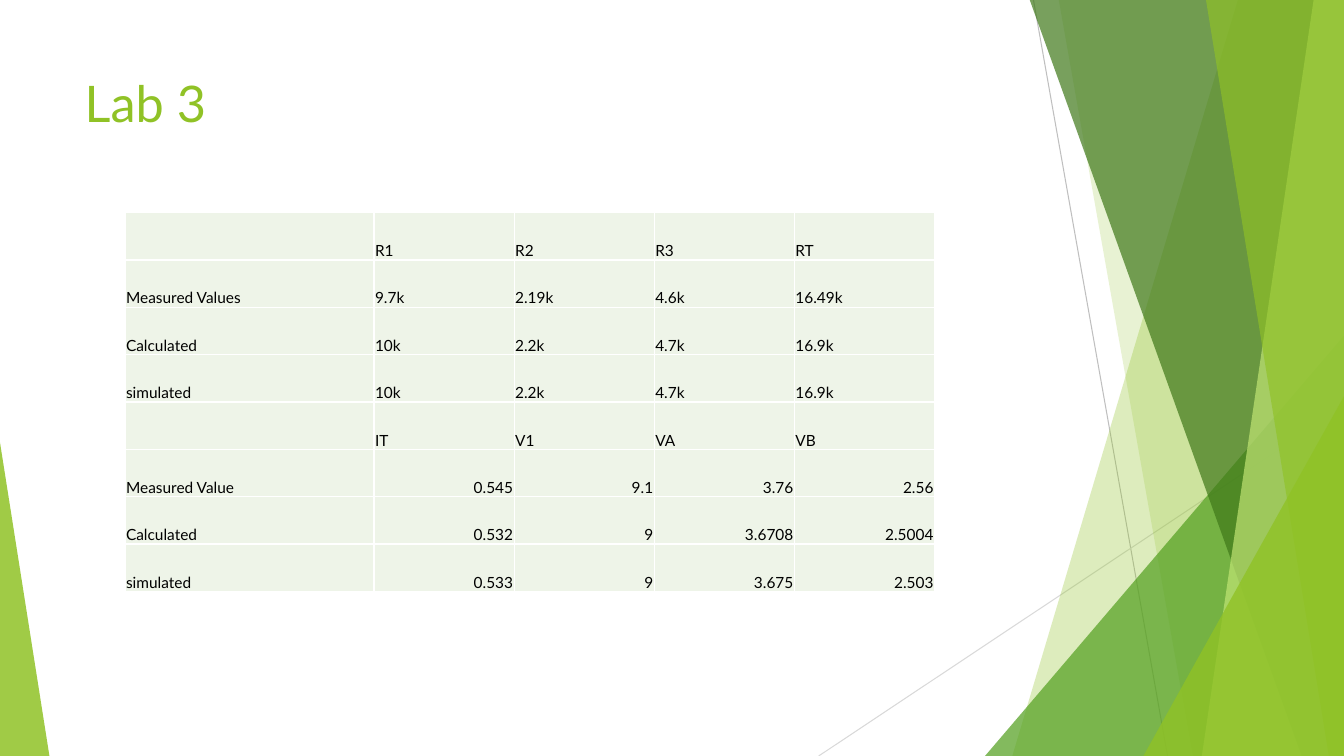
from lxml.etree import SubElement
from pptx import Presentation
from pptx.dml.color import RGBColor
from pptx.enum.shapes import MSO_CONNECTOR, MSO_SHAPE
from pptx.enum.text import MSO_ANCHOR, PP_ALIGN
from pptx.oxml.ns import qn
from pptx.util import Emu, Pt

PX = 9144
WIDE, HIGH = 1333, 750
WHITE = RGBColor(0xFF, 0xFF, 0xFF)
BLACK = RGBColor(0x00, 0x00, 0x00)
SILVER = RGBColor(0xBF, 0xBF, 0xBF)
PALE = RGBColor(0xD9, 0xD9, 0xD9)
LIME = RGBColor(0x90, 0xC2, 0x26)
GREEN = RGBColor(0x54, 0xA0, 0x21)
FOREST = RGBColor(0x3F, 0x78, 0x19)
LIGHT = RGBColor(0xC0, 0xE4, 0x74)
MINT = RGBColor(0xEE, 0xF4, 0xE8)

ROWS = [
    ["", "R1", "R2", "R3", "RT"],
    ["Measured Values", "9.7k", "2.19k", "4.6k", "16.49k"],
    ["Calculated", "10k", "2.2k", "4.7k", "16.9k"],
    ["simulated", "10k", "2.2k", "4.7k", "16.9k"],
    ["", "IT", "V1", "VA", "VB"],
    ["Measured Value", "0.545", "9.1", "3.76", "2.56"],
    ["Calculated", "0.532", "9", "3.6708", "2.5004"],
    ["simulated", "0.533", "9", "3.675", "2.503"],
]


class Board:
    """Draws styled elements on one slide, with lengths in px."""

    def __init__(self, slide, face):
        self.slide = slide
        self.shapes = slide.shapes
        self.face = face

    def scale(self, *sizes):
        return [Emu(size * PX) for size in sizes]

    def font(self, para, size, color):
        para.font.name = self.face
        para.font.size = Pt(size)
        para.font.color.rgb = color

    def paint(self, shape, color, alpha):
        shape.shadow.inherit = False
        shape.fill.solid()
        shape.fill.fore_color.rgb = color
        shape.line.fill.background()
        tint = shape.fill._xPr.find(qn("a:solidFill"))[0]
        SubElement(tint, qn("a:alpha"), val=str(alpha * 1000))

    def line(self, start, end, color):
        line = self.shapes.add_connector(
            MSO_CONNECTOR.STRAIGHT, *self.scale(*start, *end))
        line.line.color.rgb = color
        line.line.width = Pt(0.75)
        SubElement(line._element.spPr, qn("a:effectLst"))

    def shard(self, top, foot, color, alpha):
        path = self.shapes.build_freeform(top, -1, scale=PX)
        path.add_line_segments([(WIDE, -1), (WIDE, HIGH), (foot, HIGH)])
        self.paint(path.convert_to_shape(), color, alpha)

    def wedge(self, box, peak, color, alpha):
        shape = self.shapes.add_shape(
            MSO_SHAPE.ISOSCELES_TRIANGLE, *self.scale(*box))
        shape.adjustments[0] = peak
        self.paint(shape, color, alpha)

    def title(self, text, box):
        title = self.shapes.title
        title.left, title.top, title.width, title.height = self.scale(*box)
        frame = title.text_frame
        frame.text = text
        frame.vertical_anchor = MSO_ANCHOR.TOP
        para = frame.paragraphs[0]
        para.alignment = PP_ALIGN.LEFT
        self.font(para, 36, LIME)

    def border(self, cell):
        props = cell._tc.get_or_add_tcPr()
        for place, side in enumerate(("lnL", "lnR", "lnT", "lnB")):
            edge = props.makeelement(qn("a:" + side), {"w": str(Pt(1))})
            fill = SubElement(edge, qn("a:solidFill"))
            SubElement(fill, qn("a:srgbClr"), val=str(WHITE))
            props.insert(place, edge)

    def cell(self, cell, text, align):
        cell.fill.solid()
        cell.fill.fore_color.rgb = MINT
        cell.vertical_anchor = MSO_ANCHOR.BOTTOM
        cell.margin_left = cell.margin_right = cell.margin_top = Emu(PX)
        cell.margin_bottom = 0
        cell.text = text
        para = cell.text_frame.paragraphs[0]
        para.alignment = align
        self.font(para, 11, BLACK)
        self.border(cell)

    def table(self, rows, spot, widths, tall):
        size = sum(widths), tall * len(rows)
        table = self.shapes.add_table(
            len(rows), len(widths), *self.scale(*spot, *size)).table
        table.first_row = table.horz_banding = False
        for col, width in zip(table.columns, self.scale(*widths)):
            col.width = width
        for r, row in enumerate(rows):
            table.rows[r].height = Emu(tall * PX)
            for c, text in enumerate(row):
                right = r > 4 and c > 0
                align = PP_ALIGN.RIGHT if right else PP_ALIGN.LEFT
                self.cell(table.cell(r, c), text, align)


def main():
    deck = Presentation()
    deck.slide_width, deck.slide_height = Emu(WIDE * PX), Emu(HIGH * PX)
    board = Board(deck.slides.add_slide(deck.slide_layouts[5]), "Lato")
    board.line((1025, 0), (1158, HIGH), SILVER)
    board.line((WIDE, 403), (812, HIGH), PALE)
    board.shard(1228, 1004, LIME, 30)
    board.shard(1050, 1183, LIME, 20)
    board.wedge((977, 333, 356, 417), 1, GREEN, 72)
    board.shard(1021, 1291, FOREST, 70)
    board.shard(1303, 1192, LIGHT, 70)
    board.shard(1196, 1318, LIME, 65)
    board.wedge((1134, 393, 199, 357), 1, LIME, 80)
    board.wedge((0, 439, 49, 311), 0, LIME, 85)
    board.title("Lab 3", (74, 67, 940, 144))
    board.table(ROWS, (124, 211), [247] + [139] * 4, 47)
    deck.save("out.pptx")


if __name__ == "__main__":
    main()
